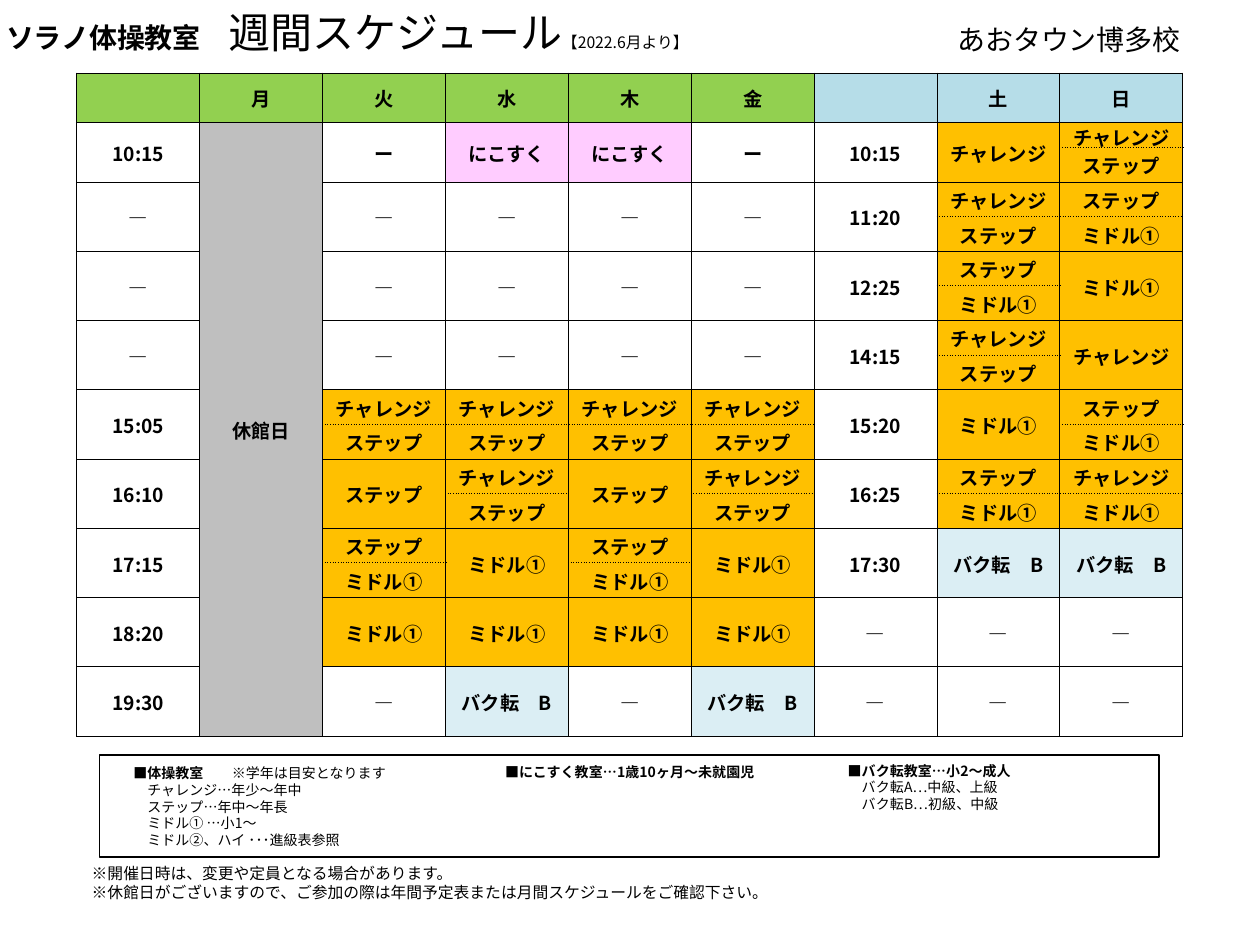
from lxml import etree
from pptx import Presentation
from pptx import util as u
from pptx.dml.color import RGBColor
from pptx.enum import shapes, text
from pptx.oxml.ns import qn

FONT = "Noto Sans CJK JP"
COLORS = {"ink": "000000", "weekday": "92D050", "weekend": "B6DDE8", "closed": "BFBFBF",
          "toddler": "FFCCFF", "class": "FFC000", "flip": "DBEEF4"}
CLASS_FILLS = {"にこすく": "toddler", "バク転　B": "flip", "チャレンジ": "class",
               "ステップ": "class", "ミドル①": "class"}


def set_paragraph(paragraph, runs, size):
    """Fill a paragraph with (text, bold, size) runs; size may be left out."""
    added = [paragraph.add_run() for _ in runs]
    fonts = [paragraph.font] + ([run.font for run in added] if len(runs) > 1 else [])
    for run, (words, *_) in zip(added, runs):
        run.text = words
    for font, (_, bold, *own_size) in zip(fonts, runs[:1] + runs):
        font.size = u.Pt(own_size[0] if own_size else size)
        font.bold = bold
        font.color.rgb = RGBColor.from_string(COLORS["ink"])
        font.name = FONT
        etree.SubElement(font._rPr, qn("a:ea"), typeface=FONT)


def style_cell(cell, words="", fill=None, dotted=()):
    """Write a cell, draw its four borders (dotted where named) and fill it."""
    cell.margin_left = cell.margin_right = cell.margin_top = u.Inches(0.01)
    cell.margin_bottom = 0
    cell.vertical_anchor = text.MSO_ANCHOR.MIDDLE
    paragraph = cell.text_frame.paragraphs[0]
    paragraph.alignment = text.PP_ALIGN.CENTER
    set_paragraph(paragraph, [(words, True)], 11)
    properties = cell._tc.get_or_add_tcPr()
    for side in "LRTB":
        line = etree.SubElement(properties, qn(f"a:ln{side}"), w=str(u.Pt(0.5)))
        solid = etree.SubElement(line, qn("a:solidFill"))
        etree.SubElement(solid, qn("a:srgbClr"), val=COLORS["ink"])
        etree.SubElement(line, qn("a:prstDash"), val="sysDot" if side in dotted else "solid")
    if fill:
        cell.fill.solid()
        cell.fill.fore_color.rgb = RGBColor.from_string(COLORS[fill])
    else:
        cell.fill.background()


presentation = Presentation()
presentation.slide_width, presentation.slide_height = u.Inches(10), u.Inches(7.5)
slide = presentation.slides.add_slide(presentation.slide_layouts[6])

# Frame around the class notes
frame = slide.shapes.add_shape(shapes.MSO_SHAPE.RECTANGLE, u.Inches(0.79), u.Inches(5.99),
                               u.Inches(8.41), u.Inches(0.81))
frame.shadow.inherit = False
frame.fill.background()
frame.line.color.rgb = RGBColor.from_string(COLORS["ink"])
frame.line.width = u.Pt(1)

# Headings and notes: left, top, width, height, size, paragraphs of runs
TEXTS = [
    (-0.05, 0, 6.54, 0.5, 16,
     [[("ソラノ体操教室　", True), ("週間スケジュール", False, 24), ("【2022.6月より】", False, 9)]]),
    (7.5, 0.13, 2, 0.37, 16, [[("あおタウン博多校", False)]]),
    (0.63, 6.81, 6.87, 0.4, 9,
     [[("※開催日時は、変更や定員となる場合があります。", False)],
      [("※休館日がございますので、ご参加の際は年間予定表または月間スケジュールをご確認下さい。", False)]]),
    (0.96, 6.02, 2.86, 0.77, 8,
     [[("■体操教室　　", True), ("※学年は目安となります", False)],
      [("　チャレンジ…年少～年中", False)],
      [("　ステップ…年中～年長", False)],
      [("　ミドル① …小1～", False)],
      [("　ミドル②、ハイ ･･･進級表参照", False)]]),
    (3.91, 6.01, 2.19, 0.54, 8, [[("■にこすく教室…1歳10ヶ月～未就園児", True)]]),
    (6.63, 6, 2.86, 0.5, 8,
     [[("■バク転教室…小2～成人", True)],
      [("　バク転A…中級、上級", False)],
      [("　バク転B…初級、中級", False)]]),
]
for left, top, width, height, size, paragraphs in TEXTS:
    box = slide.shapes.add_textbox(*map(u.Inches, (left, top, width, height)))
    box.text_frame.word_wrap = True
    for index, runs in enumerate(paragraphs):
        paragraph = box.text_frame.add_paragraph() if index else box.text_frame.paragraphs[0]
        set_paragraph(paragraph, runs, size)

# Timetable: one line per time slot, "/" splits a slot into two classes
DAYS = ["", "月", "火", "水", "木", "金", "", "土", "日"]
CS, SM = "チャレンジ/ステップ", "ステップ/ミドル①"
C, S, M, FLIP, TODDLER = "チャレンジ", "ステップ", "ミドル①", "バク転　B", "にこすく"
CLOSED_COLUMN = 1
SLOTS = [
    ["10:15", None, "ー", TODDLER, TODDLER, "ー", "10:15", C, CS],
    ["―", None, "―", "―", "―", "―", "11:20", CS, SM],
    ["―", None, "―", "―", "―", "―", "12:25", SM, M],
    ["―", None, "―", "―", "―", "―", "14:15", CS, C],
    ["15:05", None, CS, CS, CS, CS, "15:20", M, SM],
    ["16:10", None, S, CS, S, CS, "16:25", SM, "チャレンジ/ミドル①"],
    ["17:15", None, SM, M, SM, M, "17:30", FLIP, FLIP],
    ["18:20", None, M, M, M, M, "―", "―", "―"],
    ["19:30", None, "―", FLIP, "―", FLIP, "―", "―", "―"],
]
SPLIT_SLOTS = 7
SLOT_HEIGHT = 0.55
row_heights = [0.39, 0.2] + [SLOT_HEIGHT / 2] * (2 * SPLIT_SLOTS - 1) + [SLOT_HEIGHT] * 2
TABLE_WIDTH = 8.78
table = slide.shapes.add_table(len(row_heights), len(DAYS), u.Inches(0.61), u.Inches(0.58),
                               u.Inches(TABLE_WIDTH), u.Inches(sum(row_heights))).table
table.first_row = table.horz_banding = False
for column in table.columns:
    column.width = u.Inches(TABLE_WIDTH / len(DAYS))
for row, height in zip(table.rows, row_heights):
    row.height = u.Inches(height)

# Day headings
for column, day in enumerate(DAYS):
    style_cell(table.cell(0, column), day, "weekday" if column < 6 else "weekend")

# Time slots
row = 1
for slot, entries in enumerate(SLOTS):
    span = 2 if slot < SPLIT_SLOTS else 1
    for column, entry in enumerate(entries):
        if column == CLOSED_COLUMN:
            continue
        cells = [table.cell(row + offset, column) for offset in range(span)]
        classes = entry.split("/")
        if len(classes) == 2:
            for cell, name, side in zip(cells, classes, "BT"):
                style_cell(cell, name, CLASS_FILLS[name], side)
        else:
            for cell, words in zip(cells, [entry, ""]):
                style_cell(cell, words, CLASS_FILLS.get(entry))
            if span == 2:
                cells[0].merge(cells[1])
    row += span

# Closed day runs down the whole column
for row in range(1, len(row_heights)):
    style_cell(table.cell(row, CLOSED_COLUMN), "休館日" if row == 1 else "", "closed")
closed = table.cell(1, CLOSED_COLUMN)
closed.merge(table.cell(len(row_heights) - 1, CLOSED_COLUMN))
closed._tc.get_or_add_tcPr().set("vert", "eaVert")

presentation.save("out.pptx")
